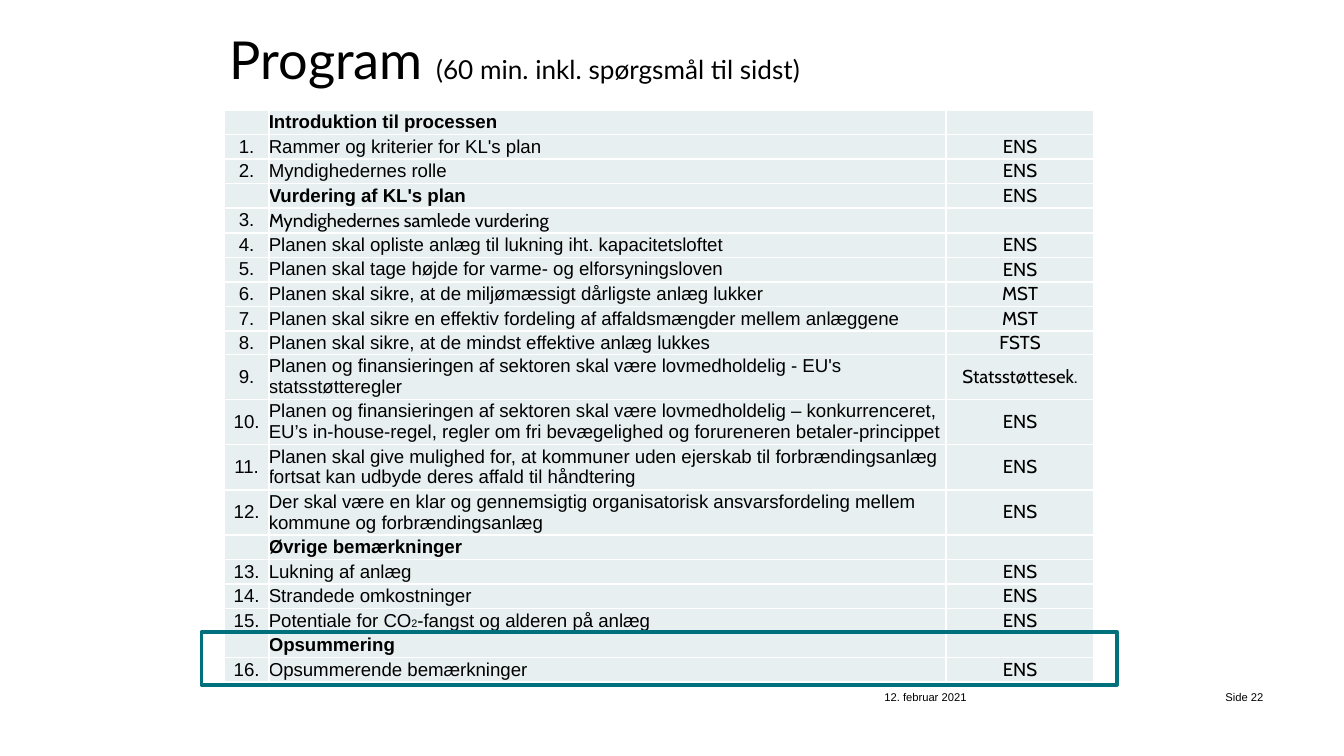
"""Build the programme slide: title, agenda table, highlighted summary and footer."""
from dataclasses import dataclass
from typing import Any

import pptx
import pptx.dml.color
import pptx.enum.shapes
import pptx.enum.text
import pptx.oxml
import pptx.oxml.ns
import pptx.util

COLORS = {"text": "000000", "cell": "E7EFF1", "border": "FFFFFF", "highlight": "00707C"}
SLIDE_WIDTH = pptx.util.Inches(10)
SLIDE_HEIGHT = pptx.util.Inches(5.625)
ALIGN = pptx.enum.text.PP_ALIGN
MIDDLE = pptx.enum.text.MSO_ANCHOR.MIDDLE
CELL_SIZE = 10
BORDER_WIDTH = pptx.util.Pt(1)
COLUMN_SHARES = (3.3, 50.4, 11)
SHORT, SHORTER, TALL = 3.25, 3.11, 5.98
NO_MARGINS = dict.fromkeys(("margin_left", "margin_top", "margin_right", "margin_bottom"), 0)
BOX_FORMAT = {
    "word_wrap": True,
    "margin_left": pptx.util.Inches(0.09),
    "margin_right": pptx.util.Inches(0.09),
    "margin_top": pptx.util.Inches(0.04),
    "margin_bottom": pptx.util.Inches(0.04),
}


@dataclass(frozen=True)
class Area:
    """Position and size in percent of the slide."""
    left: float
    top: float
    width: float
    height: float

    def lengths(self) -> tuple[int, int, int, int]:
        """Return left, top, width and height in slide units."""
        return across(self.left), down(self.top), across(self.width), down(self.height)


@dataclass(frozen=True)
class Piece:
    """A run of text with its format."""
    text: str
    size: float
    font: str = "Arial"
    bold: bool = False
    baseline: int = 0


@dataclass(frozen=True)
class Label:
    """A free text box."""
    area: Area
    pieces: tuple[Piece, ...]
    align: Any = ALIGN.LEFT


@dataclass(frozen=True)
class Item:
    """A table row; headings carry no number."""
    text: str
    owner: str = ""
    heading: bool = False
    font: str = "Arial"
    height: float = SHORT


LABELS = (
    Label(Area(16.2, 2.85, 67.5, 12.27),
          (Piece("Program ", 28, "Lato"),
           Piece("(60 min. inkl. spørgsmål til sidst)", 14, "Lato"))),
    Label(Area(64.9, 90.67, 18, 5.33), (Piece("12. februar 2021", 6),)),
    Label(Area(83.1, 90.67, 11.8, 5.33), (Piece("Side 22", 6),), ALIGN.RIGHT),
)
TABLE_AREA = Area(16.7, 14.55, 64.7, 75.5)
HIGHLIGHT_AREA = Area(15, 83.6, 68.1, 7)
ITEMS = (
    Item("Introduktion til processen", heading=True),
    Item("Rammer og kriterier for KL's plan", "ENS"),
    Item("Myndighedernes rolle", "ENS"),
    Item("Vurdering af KL's plan", "ENS", heading=True),
    Item("Myndighedernes samlede vurdering", font="Cabin"),
    Item("Planen skal opliste anlæg til lukning iht. kapacitetsloftet", "ENS"),
    Item("Planen skal tage højde for varme- og elforsyningsloven", "ENS"),
    Item("Planen skal sikre, at de miljømæssigt dårligste anlæg lukker", "MST"),
    Item("Planen skal sikre en effektiv fordeling af affaldsmængder mellem anlæggene", "MST"),
    Item("Planen skal sikre, at de mindst effektive anlæg lukkes", "FSTS", height=SHORTER),
    Item("Planen og finansieringen af sektoren skal være lovmedholdelig - EU's "
         "statsstøtteregler", "Statsstøttesek."),
    Item("Planen og finansieringen af sektoren skal være lovmedholdelig – konkurrenceret, "
         "EU’s in-house-regel, regler om fri bevægelighed og forureneren "
         "betaler-princippet", "ENS", height=TALL),
    Item("Planen skal give mulighed for, at kommuner uden ejerskab til forbrændingsanlæg "
         "fortsat kan udbyde deres affald til håndtering", "ENS", height=TALL),
    Item("Der skal være en klar og gennemsigtig organisatorisk ansvarsfordeling mellem "
         "kommune og forbrændingsanlæg", "ENS", height=TALL),
    Item("Øvrige bemærkninger", heading=True),
    Item("Lukning af anlæg", "ENS"),
    Item("Strandede omkostninger", "ENS"),
    Item("Potentiale for CO_2_-fangst og alderen på anlæg", "ENS"),
    Item("Opsummering", heading=True),
    Item("Opsummerende bemærkninger", "ENS"),
)


def across(share: float) -> int:
    """Turn a percentage of the slide width into a length."""
    return round(SLIDE_WIDTH * share / 100)


def down(share: float) -> int:
    """Turn a percentage of the slide height into a length."""
    return round(SLIDE_HEIGHT * share / 100)


def apply(target: Any, values: dict[str, Any]) -> None:
    """Set each named attribute on the target."""
    for name, value in values.items():
        setattr(target, name, value)


def color(name: str) -> pptx.dml.color.RGBColor:
    """Look up a colour by its role."""
    return pptx.dml.color.RGBColor.from_string(COLORS[name])


def write(paragraph: Any, pieces: tuple[Piece, ...], align: Any) -> None:
    """Fill a paragraph with formatted runs."""
    paragraph.alignment = align
    for piece in pieces:
        run = paragraph.add_run()
        run.text = piece.text
        apply(run.font, {"size": pptx.util.Pt(piece.size), "name": piece.font,
                         "bold": piece.bold})
        run.font.color.rgb = color("text")
        if piece.baseline:
            run.font._element.set("baseline", str(piece.baseline))


def draw_label(slide: Any, label: Label) -> None:
    """Add a text box."""
    frame = slide.shapes.add_textbox(*label.area.lengths()).text_frame
    apply(frame, BOX_FORMAT)
    write(frame.paragraphs[0], label.pieces, label.align)


def draw_cell(cell: Any, pieces: tuple[Piece, ...], align: Any) -> None:
    """Format one cell with text, borders and fill."""
    apply(cell, {**NO_MARGINS, "vertical_anchor": MIDDLE})
    paragraph = cell.text_frame.paragraphs[0]
    write(paragraph, pieces, align)
    if not pieces:
        paragraph._p.get_or_add_endParaRPr().set("sz", str(CELL_SIZE * 100))
    properties = cell._tc.get_or_add_tcPr()
    for side in ("lnL", "lnR", "lnT", "lnB"):
        properties.append(pptx.oxml.parse_xml(
            f'<a:{side} {pptx.oxml.ns.nsdecls("a")} w="{BORDER_WIDTH}"><a:solidFill>'
            f'<a:srgbClr val="{COLORS["border"]}"/></a:solidFill></a:{side}>'))
    cell.fill.solid()
    cell.fill.fore_color.rgb = color("cell")


def cell_pieces(text: str, font: str = "Arial", bold: bool = False) -> tuple[Piece, ...]:
    """Split text into runs, lowering what stands between underscores."""
    return tuple(Piece(part, CELL_SIZE, font, bold, -25 * (index % 2))
                 for index, part in enumerate(text.split("_")) if part)


def draw_agenda(slide: Any) -> None:
    """Add the agenda table, numbering the rows that are not headings."""
    table = slide.shapes.add_table(
        len(ITEMS), len(COLUMN_SHARES), *TABLE_AREA.lengths()).table
    apply(table, {"first_row": False, "horz_banding": False})
    for column, share in zip(table.columns, COLUMN_SHARES):
        column.width = across(share)
    number = 0
    for row, item in zip(table.rows, ITEMS):
        row.height = down(item.height)
        number += not item.heading
        contents = (
            (cell_pieces("" if item.heading else f"{number}."), ALIGN.CENTER),
            (cell_pieces(item.text, item.font, item.heading), ALIGN.LEFT),
            (cell_pieces(item.owner, "Cabin"), ALIGN.CENTER),
        )
        for cell, (pieces, align) in zip(row.cells, contents):
            draw_cell(cell, pieces, align)


def draw_highlight(slide: Any) -> None:
    """Frame the summary rows."""
    frame = slide.shapes.add_shape(
        pptx.enum.shapes.MSO_SHAPE.RECTANGLE, *HIGHLIGHT_AREA.lengths())
    frame.shadow.inherit = False
    frame.fill.background()
    frame.line.color.rgb = color("highlight")
    frame.line.width = pptx.util.Pt(2)


def main() -> None:
    """Create and save the presentation."""
    presentation = pptx.Presentation()
    apply(presentation, {"slide_width": SLIDE_WIDTH, "slide_height": SLIDE_HEIGHT})
    slide = presentation.slides.add_slide(presentation.slide_layouts[6])
    for label in LABELS:
        draw_label(slide, label)
    draw_agenda(slide)
    draw_highlight(slide)
    presentation.save("out.pptx")


if __name__ == "__main__":
    main()
